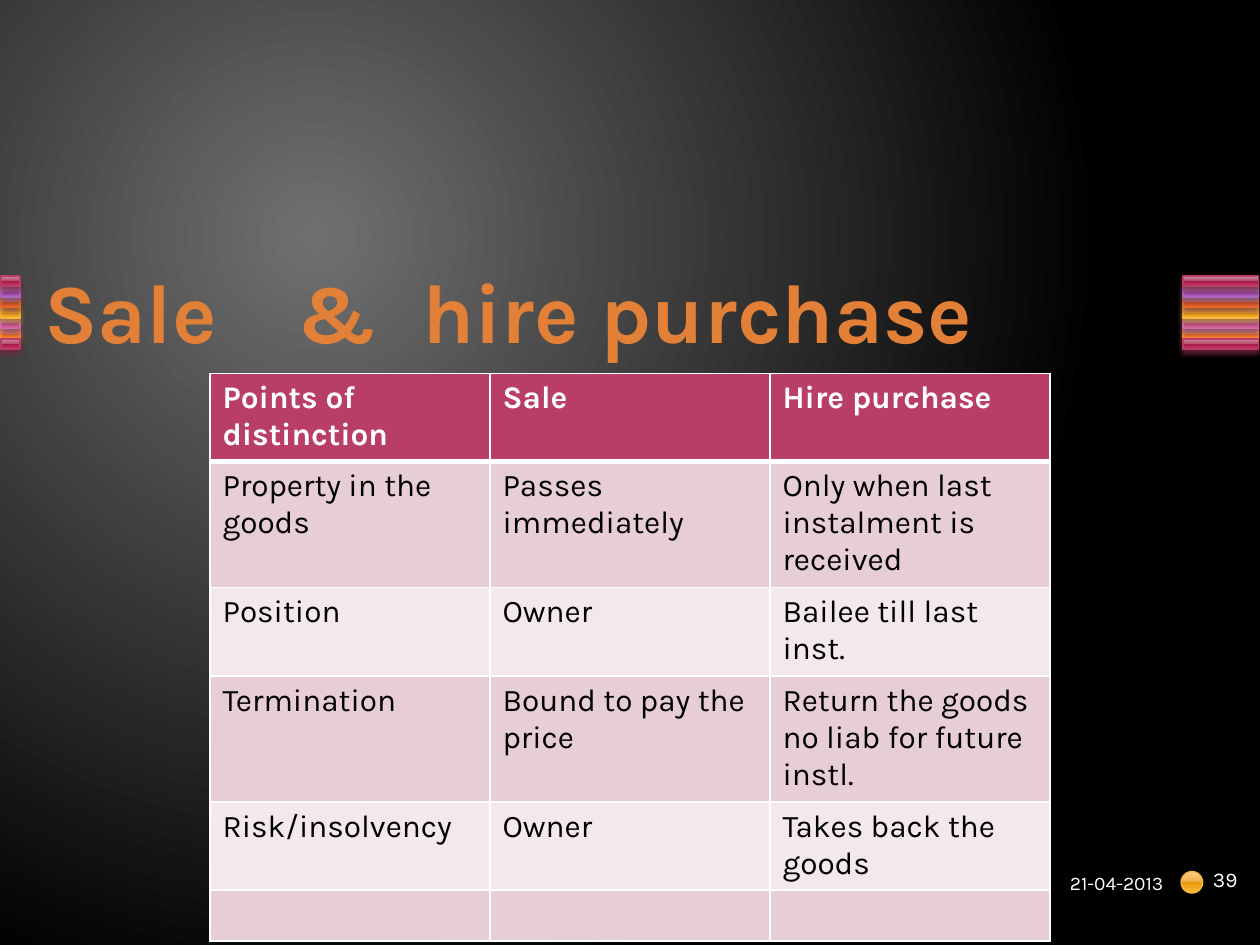
import lxml.etree
import pptx
import pptx.dml.color
import pptx.enum.shapes
import pptx.enum.text
import pptx.oxml.ns
import pptx.util

Pt = pptx.util.Pt
qn = pptx.oxml.ns.qn
SHAPE = pptx.enum.shapes.MSO_SHAPE
ALIGN = pptx.enum.text.PP_ALIGN
ANCHOR = pptx.enum.text.MSO_ANCHOR

FONT = "Karla"
WHITE = "FFFFFF"
STOPS = (0, 49, 49, 92, 100)
CRIMSON = ("B83D68", "722640", ("CE94A2", "B34869", "A61749", "C13764", "CA5D7C"))
PURPLE = ("AC66BB", "6A3F73", ("C6A2D0", "A666B4", "8F3EA1", "AD5DBF", "BA76CA"))
RUST = ("DE6C36", "894321", ("E7A493", "D66B42", "CC4809", "E9642C", "F07B55"))
AMBER = ("F9B639", "9A7023", ("FBCC93", "EFAE43", "E59807", "FFB432", "FFBE5F"))
PINK = ("CF6DA4", "804365", ("DDA4C1", "C66B9D", "B34181", "D361A0", "DC79AE"))
ORANGE = ("FA8D3D", "9A5726", ("FBB494", "F08745", "E5670B", "FF8736", "FF9961"))
STRIPES = (CRIMSON, PURPLE, RUST, AMBER, PINK, ORANGE, CRIMSON)
ROWS = (
    ("Points of distinction", "Sale", "Hire purchase"),
    ("Property in the goods", "Passes immediately", "Only when last instalment is received"),
    ("Position", "Owner", "Bailee till last inst."),
    ("Termination", "Bound to pay the price", "Return the goods no liab for future instl."),
    ("Risk/insolvency", "Owner", "Takes back the goods"),
    ("", "", ""),
)


def color(value):
    return pptx.dml.color.RGBColor.from_string(value)


def add_element(parent, tag, **attributes):
    element = lxml.etree.SubElement(parent, qn(tag))
    for name, value in attributes.items():
        element.set(name, str(value))
    return element


def set_gradient(fill, owner, stops):
    fill.gradient()
    gradient = next(owner.iter(qn("a:gradFill")))
    for child in list(gradient):
        gradient.remove(child)
    stop_list = add_element(gradient, "a:gsLst")
    for position, value in stops:
        stop = add_element(stop_list, "a:gs", pos=position * 1000)
        add_element(stop, "a:srgbClr", val=value)
    return gradient


def write_text(paragraph, text, value=WHITE, **formats):
    run = paragraph.add_run()
    run.text = text
    run.font.color.rgb = color(value)
    for name, setting in {"name": FONT, **formats}.items():
        setattr(run.font, name, setting)


def set_background(slide):
    stops = ((0, "707070"), (100, "000000"))
    gradient = set_gradient(slide.background.fill, slide.element, stops)
    circle = add_element(gradient, "a:path", path="circle")
    add_element(circle, "a:fillToRect", l=50000, t=50000, r=100000, b=100000)


def add_glossy_shape(slide, kind, box, palette):
    line, shadow, colors = palette
    shape = slide.shapes.add_shape(kind, *map(Pt, box))
    gradient = set_gradient(shape.fill, shape.element, zip(STOPS, colors))
    add_element(gradient, "a:lin", ang=5400000, scaled=0)
    shape.line.color.rgb = color(line)
    shape.line.width = Pt(0.9)
    shape.shadow.inherit = False
    return shape


def add_stripes(slide, left, top, width, height):
    step = height / len(STRIPES)
    for index in (5, 4, 3, 2, 1, 0, 6):
        palette = STRIPES[index]
        box = (left, top + index * step, width, step)
        shape = add_glossy_shape(slide, SHAPE.RECTANGLE, box, palette)
        effects = next(shape.element.iter(qn("a:effectLst")))
        shadow = add_element(effects, "a:outerShdw", blurRad=Pt(3.1), dist=Pt(2),
                             dir=5400000, rotWithShape=0)
        add_element(add_element(shadow, "a:srgbClr", val=palette[1]), "a:alpha", val=83000)


def add_label(slide, box, text, size, alignment):
    frame = slide.shapes.add_textbox(*map(Pt, box)).text_frame
    frame.word_wrap = True
    frame.vertical_anchor = ANCHOR.MIDDLE
    frame.paragraphs[0].alignment = alignment
    write_text(frame.paragraphs[0], text, size=Pt(size))


def add_footer(slide, left, top, width, height):
    dot = (left + width - 45, top + 13.5, 12.2, 12.2)
    add_glossy_shape(slide, SHAPE.OVAL, dot, AMBER)
    add_label(slide, (left, top + 7, 144, 25.2), "21-04-2013", 11, ALIGN.RIGHT)
    add_label(slide, (left + width - 34, top, 34, height), "39", 12, ALIGN.LEFT)


def place_title(slide, left, top, width, height):
    title = slide.shapes.title
    for name, value in {"left": left, "top": top, "width": width, "height": height}.items():
        setattr(title, name, Pt(value))
    frame = title.text_frame
    frame.word_wrap = True
    frame.auto_size = pptx.enum.text.MSO_AUTO_SIZE.NONE
    frame.vertical_anchor = ANCHOR.MIDDLE
    frame.paragraphs[0].alignment = ALIGN.LEFT
    write_text(frame.paragraphs[0], "Sale \t&\thire purchase\t", "E38037", size=Pt(48), bold=True)


def set_borders(cell, bottom):
    properties = cell._tc.get_or_add_tcPr()
    for position, (side, width) in enumerate({"L": 1, "R": 1, "T": 1, "B": bottom}.items()):
        line = add_element(properties, f"a:ln{side}", w=Pt(width))
        add_element(add_element(line, "a:solidFill"), "a:srgbClr", val=WHITE)
        properties.insert(position, line)


def add_comparison_table(slide, left, top, width, row_height):
    box = (left, top, width, row_height * len(ROWS))
    table = slide.shapes.add_table(len(ROWS), len(ROWS[0]), *map(Pt, box)).table
    for column in table.columns:
        column.width = Pt(width / len(ROWS[0]))
    for row_index, texts in enumerate(ROWS):
        header = row_index == 0
        fill = "B83D68" if header else ("F3E8EB", "E6CED4")[row_index % 2]
        table.rows[row_index].height = Pt(row_height)
        for column_index, text in enumerate(texts):
            cell = table.cell(row_index, column_index)
            cell.fill.solid()
            cell.fill.fore_color.rgb = color(fill)
            set_borders(cell, 3 if header else 1)
            if text:
                write_text(cell.text_frame.paragraphs[0], text,
                           WHITE if header else "000000", size=Pt(18), bold=header)


def main():
    presentation = pptx.Presentation()
    presentation.slide_width = Pt(720)
    presentation.slide_height = Pt(540)
    slide = presentation.slides.add_slide(presentation.slide_layouts[5])
    set_background(slide)
    add_stripes(slide, 0.7, 157.7, 10.8, 42)
    add_stripes(slide, 676, 157.7, 43.2, 42)
    add_footer(slide, 528, 484.6, 192, 36)
    place_title(slide, 18, 132, 648, 90)
    add_comparison_table(slide, 120, 213.3, 480, 29.2)
    presentation.save("out.pptx")


if __name__ == "__main__":
    main()
